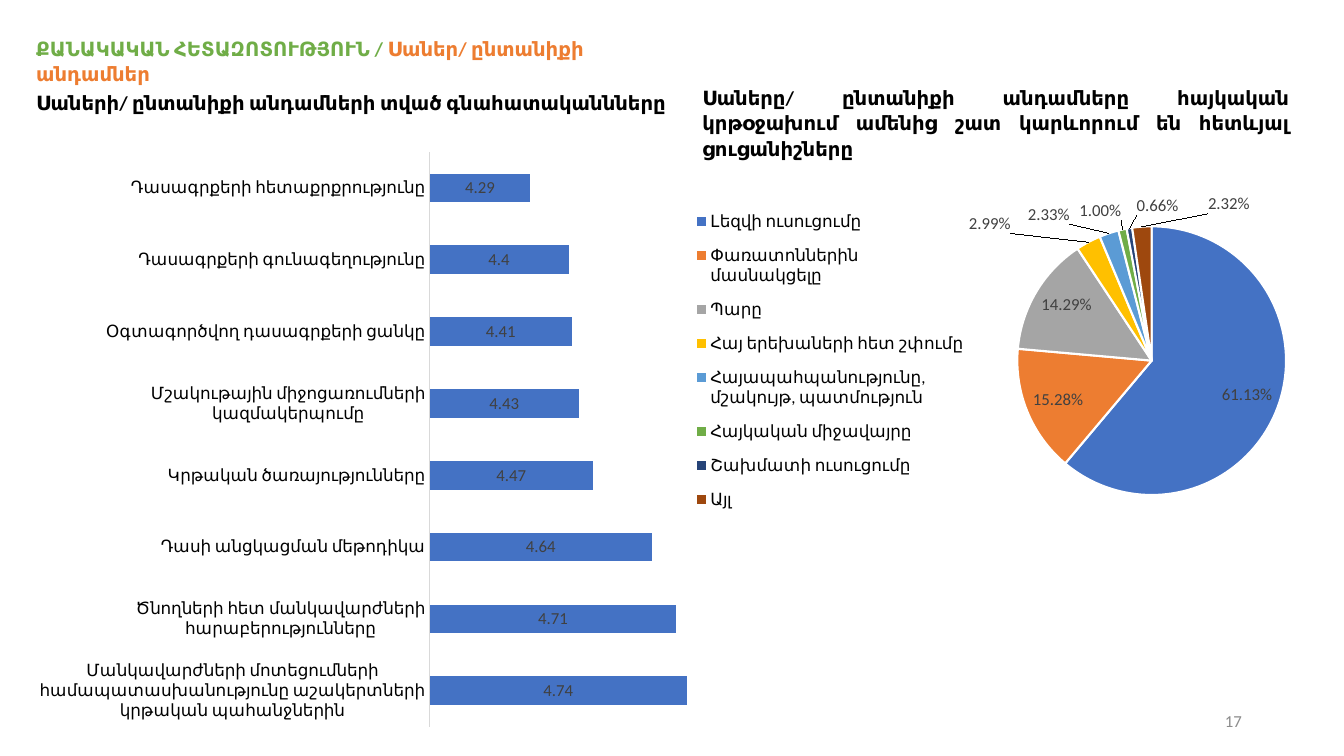
from dataclasses import dataclass

from lxml import etree
from pptx import Presentation
from pptx.chart.data import CategoryChartData
from pptx.dml.color import RGBColor
from pptx.enum.chart import XL_CHART_TYPE as ChartType
from pptx.enum.chart import XL_LABEL_POSITION as LabelPosition
from pptx.enum.chart import XL_LEGEND_POSITION as LegendPosition
from pptx.enum.chart import XL_TICK_LABEL_POSITION as TickLabelPosition
from pptx.enum.chart import XL_TICK_MARK as TickMark
from pptx.enum.text import MSO_ANCHOR as Anchor
from pptx.enum.text import MSO_AUTO_SIZE as AutoSize
from pptx.enum.text import PP_ALIGN as Align
from pptx.oxml.ns import qn
from pptx.util import Pt


@dataclass(frozen=True)
class Theme:
    font: str = "Calibri"
    heading_size: int = 14
    body_size: int = 12
    black: str = "000000"
    white: str = "FFFFFF"
    green: str = "70AD47"
    orange: str = "ED7D31"
    blue: str = "4472C4"
    label: str = "404040"
    axis: str = "D9D9D9"
    page_number: str = "8C8C8C"
    slices: tuple = ("4472C4", "ED7D31", "A5A5A5", "FFC000",
                     "5B9BD5", "70AD47", "264478", "9E480E")


THEME = Theme()

RATINGS = {
    "Մանկավարժների մոտեցումների համապատասխանությունը աշակերտների կրթական պահանջներին": 4.74,
    "Ծնողների հետ մանկավարժների հարաբերությունները": 4.71,
    "Դասի անցկացման մեթոդիկա": 4.64,
    "Կրթական ծառայությունները": 4.47,
    "Մշակութային միջոցառումների կազմակերպումը": 4.43,
    "Օգտագործվող դասագրքերի ցանկը": 4.41,
    "Դասագրքերի գունագեղությունը": 4.4,
    "Դասագրքերի հետաքրքրությունը": 4.29,
}

PRIORITIES = {
    "Լեզվի ուսուցումը": 0.6113,
    "Փառատոններին մասնակցելը": 0.1528,
    "Պարը": 0.1429,
    "Հայ երեխաների հետ շփումը": 0.0299,
    "Հայապահպանությունը, մշակույթ, պատմություն": 0.0233,
    "Հայկական միջավայրը": 0.01,
    "Շախմատի ուսուցումը": 0.0066,
    "Այլ": 0.0232,
}

OUTER_LABEL_SHIFTS = {3: (-0.12, -0.01), 4: (-0.06, -0.01), 5: (0, -0.01),
                      6: (0.08, -0.02), 7: (0.14, -0.02)}


def set_font(font, size, color, bold=False):
    font.name = THEME.font
    font.size = Pt(size)
    font.bold = bold
    font.color.rgb = RGBColor.from_string(color)


def fill_solid(chart_format, color):
    chart_format.fill.solid()
    chart_format.fill.fore_color.rgb = RGBColor.from_string(color)


def add_text(slide, box, runs, size, bold=False, align=Align.LEFT,
             line_spacing=1.0, space_after=0, anchor=Anchor.TOP):
    shape = slide.shapes.add_textbox(*map(Pt, box))
    frame = shape.text_frame
    frame.word_wrap = True
    frame.vertical_anchor = anchor
    if anchor == Anchor.TOP:
        frame.auto_size = AutoSize.SHAPE_TO_FIT_TEXT
    paragraph = frame.paragraphs[0]
    paragraph.alignment = align
    paragraph.line_spacing = line_spacing
    paragraph.space_after = Pt(space_after)
    for text, color in runs:
        run = paragraph.add_run()
        run.text = text
        set_font(run.font, size, color, bold)


def add_heading(slide, box, runs, align=Align.JUSTIFY, space_after=6):
    add_text(slide, box, runs, THEME.heading_size, True, align, 1.07, space_after)


def build_layout(**values):
    layout = etree.Element(qn("c:layout"))
    manual = etree.SubElement(layout, qn("c:manualLayout"))
    for tag, value in values.items():
        etree.SubElement(manual, qn(f"c:{tag}"), val=str(value))
    return layout


def build_area(x, y, width, height, **target):
    return build_layout(**target, xMode="edge", yMode="edge",
                        x=x, y=y, w=width, h=height)


def set_plot_area(chart, *area):
    plot_area = chart._chartSpace.chart.plotArea
    for layout in plot_area.findall(qn("c:layout")):
        plot_area.remove(layout)
    plot_area.insert(0, build_area(*area, layoutTarget="inner"))


def add_chart(slide, chart_type, box, values, number_format):
    data = CategoryChartData(number_format=number_format)
    data.categories = list(values)
    data.add_series("Series 1", list(values.values()))
    chart = slide.shapes.add_chart(chart_type, *map(Pt, box), data).chart
    chart.has_title = False
    chart.has_legend = False
    set_font(chart.font, 10, THEME.black)
    return chart


def show_values(series, position, number_format):
    labels = series.data_labels
    labels.show_value = True
    labels.number_format = number_format
    labels.number_format_is_linked = False
    labels.position = position
    set_font(labels.font, THEME.body_size, THEME.label)


def add_ratings_chart(slide, box):
    chart = add_chart(slide, ChartType.BAR_STACKED, box, RATINGS, "General")
    set_plot_area(chart, 0.58, 0.02, 0.4, 0.96)
    plot = chart.plots[0]
    plot.vary_by_categories = False
    plot.gap_width = 150
    plot.overlap = 100
    fill_solid(plot.series[0].format, THEME.blue)
    show_values(plot.series[0], LabelPosition.CENTER, "General")
    value_axis = chart.value_axis
    value_axis.minimum_scale = 4
    value_axis.maximum_scale = 4.8
    value_axis.has_major_gridlines = False
    value_axis.visible = False
    category_axis = chart.category_axis
    category_axis.major_tick_mark = TickMark.NONE
    category_axis.minor_tick_mark = TickMark.NONE
    category_axis.tick_label_position = TickLabelPosition.NEXT_TO_AXIS
    set_font(category_axis.tick_labels.font, THEME.body_size, THEME.black)
    category_axis.format.line.width = Pt(0.75)
    category_axis.format.line.color.rgb = RGBColor.from_string(THEME.axis)


def add_priorities_chart(slide, box):
    chart = add_chart(slide, ChartType.PIE, box, PRIORITIES, "0.00%")
    set_plot_area(chart, 0.52, 0.07, 0.43, 0.88)
    chart.has_legend = True
    legend = chart.legend
    legend.position = LegendPosition.BOTTOM
    legend.include_in_layout = False
    set_font(legend.font, THEME.body_size, THEME.black)
    for layout in legend._element.findall(qn("c:layout")):
        legend._element.remove(layout)
    legend._element.find(qn("c:legendPos")).addnext(build_area(0, 0.04, 0.44, 0.94))
    plot = chart.plots[0]
    plot.vary_by_categories = True
    series = plot.series[0]
    show_values(series, LabelPosition.INSIDE_END, "0.00%")
    for index, color in enumerate(THEME.slices):
        point_format = series.points[index].format
        fill_solid(point_format, color)
        point_format.line.width = Pt(1.5)
        point_format.line.color.rgb = RGBColor.from_string(THEME.white)
    for index, (x, y) in OUTER_LABEL_SHIFTS.items():
        label = series.points[index].data_label
        set_font(label.font, THEME.body_size, THEME.label)
        label.position = LabelPosition.OUTSIDE_END
        element = series.data_labels._element.findall(qn("c:dLbl"))[-1]
        element.find(qn("c:idx")).addnext(build_layout(x=x, y=y))


def main():
    presentation = Presentation()
    presentation.slide_width = Pt(960)
    presentation.slide_height = Pt(540)
    slide = presentation.slides.add_slide(presentation.slide_layouts[6])
    add_heading(slide, (18.7, 60.5, 703.4, 25.2),
                [("Սաների/ ընտանիքի անդամների տված գնահատականնները", THEME.black)])
    add_ratings_chart(slide, (18.7, 100, 496.8, 427.7))
    add_priorities_chart(slide, (494.6, 131, 446.4, 248.4))
    add_heading(slide, (494.6, 56.9, 433.4, 43.2),
                [("Սաները/ ընտանիքի անդամները հայկական կրթօջախում ամենից շատ "
                  "կարևորում են հետևյալ ցուցանիշները", THEME.black)])
    add_heading(slide, (18.7, 21.6, 475.2, 25.2),
                [("ՔԱՆԱԿԱԿԱՆ ՀԵՏԱԶՈՏՈՒԹՅՈՒՆ / ", THEME.green),
                 ("Սաներ/ ընտանիքի անդամներ", THEME.orange)], Align.LEFT, 8)
    add_text(slide, (678.2, 500.4, 216, 28.8), [("17", THEME.page_number)],
             THEME.body_size, align=Align.RIGHT, anchor=Anchor.MIDDLE)
    presentation.save("out.pptx")


if __name__ == "__main__":
    main()
